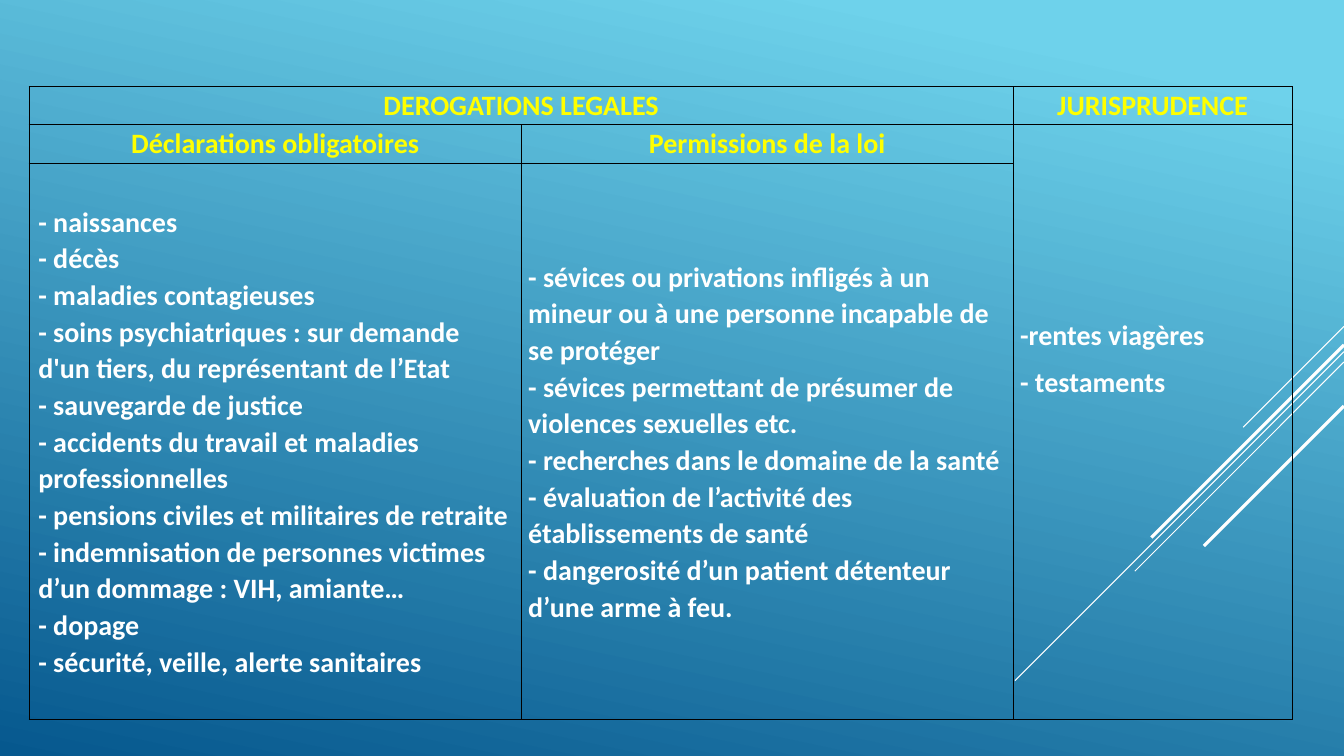
from dataclasses import dataclass
from pptx import Presentation
from pptx.util import Pt
from pptx.dml.color import RGBColor
from pptx.enum.shapes import MSO_CONNECTOR as Connector
from pptx.enum.text import MSO_ANCHOR as Anchor, PP_ALIGN as Align
from pptx.oxml import parse_xml
from pptx.oxml.ns import nsdecls


@dataclass(frozen=True)
class Theme:
    font: str = "Calibri"
    size: int = 20
    heading: str = "FFFF00"
    body: str = "FFFFFF"
    stroke: str = "FFFFFF"
    border: str = "000000"
    sky: str = "6ED2EB"
    deep: str = "06588E"


THEME = Theme()
SLIDE_WIDTH, SLIDE_HEIGHT = 960, 540
TABLE_LEFT, TABLE_TOP = 20.9, 61.9
COLUMN_WIDTHS = [351.4, 351.4, 199.4]
ROW_HEIGHTS = [27.3, 27.3, 397.4]
MERGES = [((0, 0), (0, 1)), ((1, 2), (2, 2))]

HEADINGS = {
    (0, 0): "DEROGATIONS LEGALES",
    (0, 2): "JURISPRUDENCE",
    (1, 0): "Déclarations obligatoires",
    (1, 1): "Permissions de la loi",
}
DECLARATIONS = [
    "- naissances",
    "- décès",
    "- maladies contagieuses",
    "- soins psychiatriques : sur demande\vd'un tiers, du représentant de l’Etat",
    "- sauvegarde de justice",
    "- accidents du travail et maladies professionnelles",
    "- pensions civiles et militaires de retraite",
    "- indemnisation de personnes victimes d’un dommage : VIH, amiante…",
    "- dopage",
    "- sécurité, veille, alerte sanitaires",
]
PERMISSIONS = [
    "- sévices ou privations infligés à un mineur ou à une personne incapable de se protéger",
    "- sévices permettant de présumer de violences sexuelles etc.",
    "- recherches dans le domaine de la santé",
    "- évaluation de l’activité des établissements de santé",
    "- dangerosité d’un patient détenteur d’une arme à feu.",
]
JURISPRUDENCE = ["-rentes viagères", "- testaments"]

# (start height, diagonal reach, width)
DIAGONALS = [
    (233.2, 72, 0.75),
    (251.2, 235, 0.75),
    (258.6, 149.4, 0.75),
    (246.4, 137.6, 2.25),
    (290, 100, 2.25),
]


def write_text(cell, lines, color=THEME.body, align=Align.LEFT, anchor=Anchor.TOP,
               top=0, left=5, space_after=0):
    cell.vertical_anchor = anchor
    cell.margin_top, cell.margin_left = Pt(top), Pt(left)
    frame = cell.text_frame
    frame.word_wrap = True
    for index, line in enumerate(lines):
        paragraph = frame.add_paragraph() if index else frame.paragraphs[0]
        paragraph.text = line
        paragraph.alignment = align
        paragraph.line_spacing = 1.07
        paragraph.space_after = Pt(space_after)
        for run in paragraph.runs:
            run.font.name = THEME.font
            run.font.size = Pt(THEME.size)
            run.font.bold = True
            run.font.color.rgb = RGBColor.from_string(color)


def format_cell(cell):
    cell.margin_left = cell.margin_right = Pt(5)
    cell.margin_top = cell.margin_bottom = Pt(0)
    cell.fill.background()
    properties = cell._tc.get_or_add_tcPr()
    for index, side in enumerate("LRTB"):
        properties.insert(index, parse_xml(
            f'<a:ln{side} {nsdecls("a")} w="{Pt(1)}"><a:solidFill>'
            f'<a:srgbClr val="{THEME.border}"/></a:solidFill></a:ln{side}>'))


def paint_background(slide):
    fill = slide.background.fill
    fill.gradient()
    fill.gradient_angle = 360 - 102
    for stop, position, color in zip(fill.gradient_stops, (0.1, 1), (THEME.sky, THEME.deep)):
        stop.position = position
        stop.color.rgb = RGBColor.from_string(color)


def draw_diagonals(slide):
    for start, reach, width in DIAGONALS:
        line = slide.shapes.add_connector(
            Connector.STRAIGHT, Pt(SLIDE_WIDTH), Pt(start),
            Pt(SLIDE_WIDTH - reach), Pt(start + reach))
        line.line.color.rgb = RGBColor.from_string(THEME.stroke)
        line.line.width = Pt(width)
        line._element.spPr.append(parse_xml(f'<a:effectLst {nsdecls("a")}/>'))


def build_table(slide):
    table = slide.shapes.add_table(
        len(ROW_HEIGHTS), len(COLUMN_WIDTHS), Pt(TABLE_LEFT), Pt(TABLE_TOP),
        Pt(sum(COLUMN_WIDTHS)), Pt(sum(ROW_HEIGHTS))).table
    table.first_row = table.horz_banding = False
    for column, width in zip(table.columns, COLUMN_WIDTHS):
        column.width = Pt(width)
    for row, height in zip(table.rows, ROW_HEIGHTS):
        row.height = Pt(height)
    for cell in table.iter_cells():
        format_cell(cell)
    for first, last in MERGES:
        table.cell(*first).merge(table.cell(*last))
    for place, heading in HEADINGS.items():
        write_text(table.cell(*place), [heading], color=THEME.heading, align=Align.CENTER)
    write_text(table.cell(2, 0), DECLARATIONS, anchor=Anchor.MIDDLE, left=6.5)
    write_text(table.cell(2, 1), PERMISSIONS, anchor=Anchor.MIDDLE)
    write_text(table.cell(1, 2), JURISPRUDENCE, top=136.5, space_after=8)


def main():
    presentation = Presentation()
    presentation.slide_width, presentation.slide_height = Pt(SLIDE_WIDTH), Pt(SLIDE_HEIGHT)
    slide = presentation.slides.add_slide(presentation.slide_layouts[6])
    paint_background(slide)
    draw_diagonals(slide)
    build_table(slide)
    presentation.save("out.pptx")


if __name__ == "__main__":
    main()
